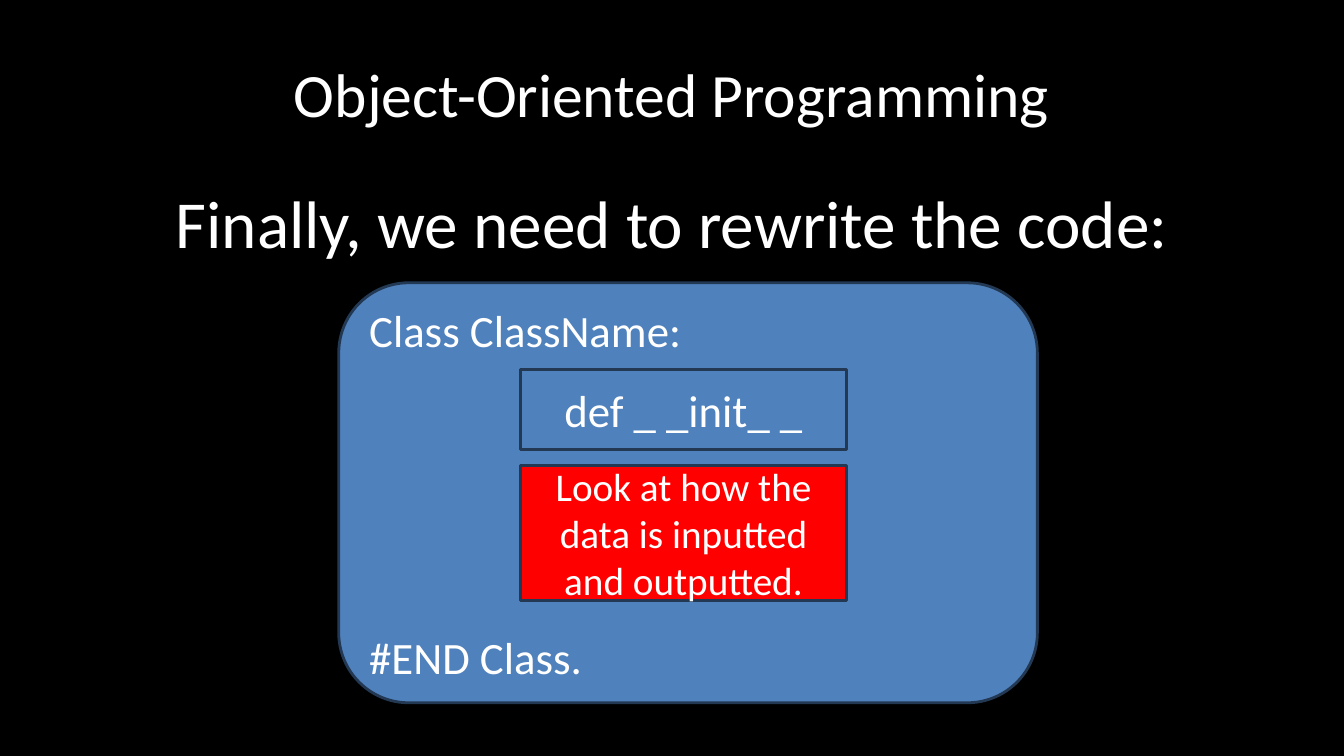
from dataclasses import dataclass

from pptx import Presentation
from pptx.dml.color import RGBColor
from pptx.enum.shapes import MSO_SHAPE
from pptx.enum.text import MSO_ANCHOR, PP_ALIGN
from pptx.slide import Slide
from pptx.text.text import TextFrame
from pptx.util import Pt

RECT = MSO_SHAPE.RECTANGLE
ROUND = MSO_SHAPE.ROUNDED_RECTANGLE
TOP = MSO_ANCHOR.TOP
MIDDLE = MSO_ANCHOR.MIDDLE
LEFT = PP_ALIGN.LEFT
CENTER = PP_ALIGN.CENTER

BLACK = RGBColor(0x00, 0x00, 0x00)
WHITE = RGBColor(0xFF, 0xFF, 0xFF)
BLUE = RGBColor(0x4F, 0x81, 0xBD)
NAVY = RGBColor(0x23, 0x39, 0x53)
RED = RGBColor(0xFF, 0x00, 0x00)
FONT = "Calibri"


@dataclass(frozen=True)
class Label:
    left: float
    top: float
    width: float
    height: float
    text: str
    size: float
    anchor: MSO_ANCHOR


@dataclass(frozen=True)
class Box:
    left: float
    top: float
    width: float
    height: float
    kind: MSO_SHAPE
    fill: RGBColor
    lines: tuple[str, ...]
    size: float
    align: PP_ALIGN = CENTER
    gap: float = 0


LABELS = [
    Label(48, 21.6, 864, 90, "Object-Oriented Programming", 44, MIDDLE),
    Label(48, 126, 864, 356.4, "Finally, we need to rewrite the code:", 48, TOP),
]

BOXES = [
    Box(242, 202, 499, 300, ROUND, BLUE,
        ("Class ClassName:", "#END Class."), 32, LEFT, 195),
    Box(372, 332.5, 232.5, 96.5, RECT, RED,
        ("Look at how the data is inputted and outputted.",), 28),
    Box(372, 264, 232.5, 57, RECT, BLUE, ("def _ _init_ _",), 32),
]


def write(frame: TextFrame, lines: tuple[str, ...], size: float,
          align: PP_ALIGN, anchor: MSO_ANCHOR, gap: float = 0) -> None:
    frame.word_wrap = True
    frame.vertical_anchor = anchor
    for index, line in enumerate(lines):
        para = frame.add_paragraph() if index else frame.paragraphs[0]
        para.alignment = align
        para.space_before = Pt(gap if index else 0)
        run = para.add_run()
        run.text = line
        run.font.name = FONT
        run.font.size = Pt(size)
        run.font.color.rgb = WHITE


def draw_label(slide: Slide, label: Label) -> None:
    shape = slide.shapes.add_textbox(
        Pt(label.left), Pt(label.top), Pt(label.width), Pt(label.height))
    write(shape.text_frame, (label.text,), label.size, CENTER, label.anchor)


def draw_box(slide: Slide, box: Box) -> None:
    shape = slide.shapes.add_shape(
        box.kind, Pt(box.left), Pt(box.top), Pt(box.width), Pt(box.height))
    shape.shadow.inherit = False
    shape.fill.solid()
    shape.fill.fore_color.rgb = box.fill
    shape.line.color.rgb = NAVY
    shape.line.width = Pt(2)
    write(shape.text_frame, box.lines, box.size, box.align, MIDDLE, box.gap)


def main() -> None:
    deck = Presentation()
    deck.slide_width = Pt(960)
    deck.slide_height = Pt(540)
    slide = deck.slides.add_slide(deck.slide_layouts[6])
    slide.background.fill.solid()
    slide.background.fill.fore_color.rgb = BLACK
    for box in BOXES:
        draw_box(slide, box)
    for label in LABELS:
        draw_label(slide, label)
    deck.save("out.pptx")


if __name__ == "__main__":
    main()
